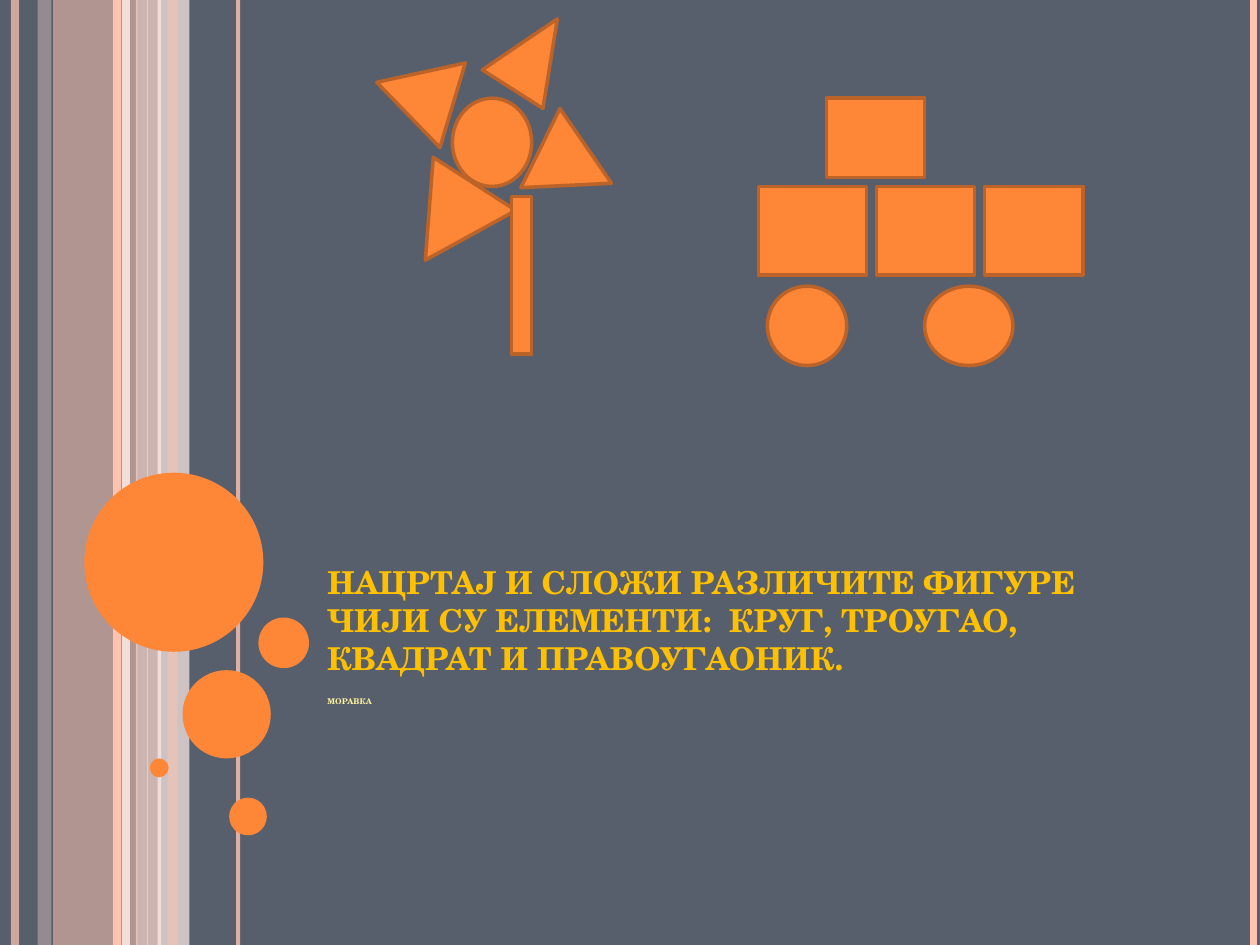
from pptx import Presentation
from pptx.dml.color import RGBColor
from pptx.enum.shapes import MSO_CONNECTOR, MSO_SHAPE
from pptx.enum.text import MSO_ANCHOR, PP_ALIGN
from pptx.oxml.ns import qn
from pptx.util import Cm, Pt
from lxml import etree

RECTANGLE = MSO_SHAPE.RECTANGLE
PROCESS = MSO_SHAPE.FLOWCHART_PROCESS
OVAL = MSO_SHAPE.OVAL
TRIANGLE = MSO_SHAPE.ISOSCELES_TRIANGLE
STRAIGHT = MSO_CONNECTOR.STRAIGHT
TOP, BOTTOM = MSO_ANCHOR.TOP, MSO_ANCHOR.BOTTOM

SLATE = RGBColor(0x57, 0x5F, 0x6D)
ORANGE = RGBColor(0xFE, 0x86, 0x37)
BROWN = RGBColor(0xBC, 0x63, 0x29)
SALMON = RGBColor(0xFE, 0xC3, 0xAE)
PEACH = RGBColor(0xFF, 0xD9, 0xCE)
CREAM = RGBColor(0xFF, 0xED, 0xE8)
GOLD = RGBColor(0xFF, 0xC0, 0x00)
YELLOW = RGBColor(0xFF, 0xF3, 0x9D)

WIDTH, HEIGHT = 25.4, 19.05


class SlideBuilder:
    """Holds the style and the current slide; lengths are in centimetres."""

    font_name = "TeX Gyre Schola"
    outline_width = 2

    def __init__(self, slide):
        self.slide = slide

    def set_opacity(self, element, percent):
        if percent < 100:
            color = next(element.iter(qn("a:srgbClr")))
            etree.SubElement(color, qn("a:alpha"), val=str(percent * 1000))

    def shape(self, kind, left, top, width, height, color=ORANGE,
              outline=None, rotation=0, opacity=100):
        shape = self.slide.shapes.add_shape(
            kind, Cm(left), Cm(top), Cm(width), Cm(height))
        shape.shadow.inherit = False
        shape.rotation = rotation
        shape.fill.solid()
        shape.fill.fore_color.rgb = color
        self.set_opacity(shape.fill._xPr, opacity)
        if outline is None:
            shape.line.fill.background()
        else:
            shape.line.color.rgb = outline
            shape.line.width = Pt(self.outline_width)

    def figure(self, kind, left, top, width, height, rotation=0):
        self.shape(kind, left, top, width, height, outline=BROWN, rotation=rotation)

    def stripe(self, left, width, color, opacity):
        self.shape(RECTANGLE, left, 0, width, HEIGHT, color, opacity=opacity)

    def vertical_line(self, x, color, width, opacity=100):
        connector = self.slide.shapes.add_connector(
            STRAIGHT, Cm(x), 0, Cm(x), Cm(HEIGHT))
        connector.line.color.rgb = color
        connector.line.width = Pt(width)
        properties = connector._element.spPr
        self.set_opacity(properties, opacity)
        etree.SubElement(properties, qn("a:effectLst"))

    def text(self, content, left, top, width, height, size, color, anchor,
             space_before=0):
        box = self.slide.shapes.add_textbox(
            Cm(left), Cm(top), Cm(width), Cm(height))
        frame = box.text_frame
        frame.word_wrap = True
        frame.vertical_anchor = anchor
        paragraph = frame.paragraphs[0]
        paragraph.alignment = PP_ALIGN.LEFT
        paragraph.space_before = Pt(space_before)
        run = paragraph.add_run()
        run.text = content
        font_format = {"name": self.font_name, "size": Pt(size), "bold": True}
        for attribute, value in font_format.items():
            setattr(run.font, attribute, value)
        run.font.color.rgb = color


def main():
    presentation = Presentation()
    presentation.slide_width, presentation.slide_height = Cm(WIDTH), Cm(HEIGHT)
    slide = presentation.slides.add_slide(presentation.slide_layouts[6])
    slide.background.fill.solid()
    slide.background.fill.fore_color.rgb = SLATE
    builder = SlideBuilder(slide)

    # Striped band on the left: left, width, color, opacity
    for stripe in [(1.07, 1.7, SALMON, 54), (0.76, 0.28, PEACH, 36),
                   (2.74, 0.51, PEACH, 70), (3.18, 0.64, CREAM, 71)]:
        builder.stripe(*stripe)
    # Lines over the band: x, color, width, opacity
    for line in [(0.3, SALMON, 4.5, 73), (2.54, CREAM, 4.5, 83),
                 (2.36, SALMON, 4.5), (4.8, SALMON, 2.25, 82),
                 (2.97, SALMON, 0.75)]:
        builder.vertical_line(*line)
    builder.stripe(3.38, 0.2, SALMON, 51)

    # Decorative bubbles: left, top, diameter
    for left, top, diameter in [(1.7, 9.53, 3.61), (3.68, 13.51, 1.78),
                                (3.02, 15.29, 0.38), (4.62, 16.08, 0.76),
                                (5.21, 12.45, 1.02)]:
        builder.shape(OVAL, left, top, diameter, diameter)

    # Right edge
    builder.vertical_line(25.27, SALMON, 4.5)

    # Title and subtitle
    builder.text("НАЦРТАЈ И СЛОЖИ РАЗЛИЧИТЕ ФИГУРЕ  ЧИЈИ СУ ЕЛЕМЕНТИ:  "
                 "КРУГ, ТРОУГАО, КВАДРАТ И ПРАВОУГАОНИК.",
                 6.35, 8.05, 17.15, 5.72, 18, GOLD, BOTTOM)
    builder.text("МОРАВКА", 6.35, 13.92, 17.15, 0.38, 4.5, YELLOW, TOP,
                 space_before=6)

    # Flower: centre, petals and stem
    builder.figure(OVAL, 9.12, 1.98, 1.6, 1.78)
    for petal in [(10.06, 0.25, 1.45, 1.68, 32.5), (10.72, 2.54, 1.78, 1.6, 116.3),
                  (7.47, 1.09, 1.78, 1.6, 286.8), (8.08, 3.56, 1.98, 1.83, 212.8)]:
        builder.figure(TRIANGLE, *petal)
    builder.figure(PROCESS, 10.31, 3.96, 0.41, 3.18)

    # Truck: row of blocks, cab and wheels
    block_left, block_gap = 15.29, 0.2
    for block_width in (2.18, 1.98, 1.98):
        builder.figure(PROCESS, block_left, 3.76, block_width, 1.78)
        block_left += block_width + block_gap
    builder.figure(PROCESS, 16.66, 1.98, 1.98, 1.6)
    for wheel_left, wheel_width in [(15.47, 1.6), (18.64, 1.78)]:
        builder.figure(OVAL, wheel_left, 5.77, wheel_width, 1.6)

    presentation.save("out.pptx")


if __name__ == "__main__":
    main()
